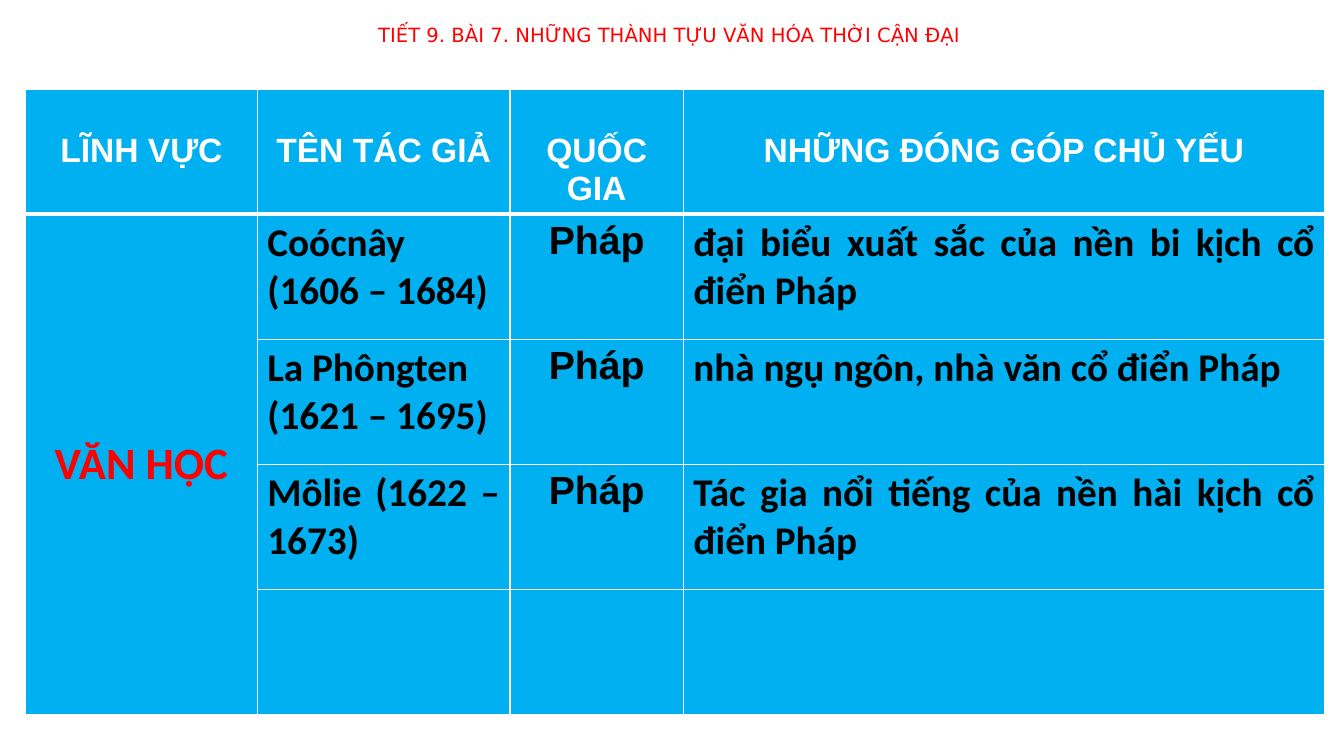
import lxml.etree
import pptx
import pptx.dml.color
import pptx.enum.text
import pptx.oxml.ns
import pptx.util

ALIGN = pptx.enum.text.PP_ALIGN
ANCHOR = pptx.enum.text.MSO_ANCHOR
SKY, RED, WHITE, BLACK = "00B0F0", "FF0000", "FFFFFF", "000000"


def rgb(value):
    return pptx.dml.color.RGBColor.from_string(value)


class LessonSlide:
    """Holds the slide and its style; lengths are percentages of the slide's size."""

    def __init__(self, prs):
        self.width, self.height = prs.slide_width, prs.slide_height
        self.slide = prs.slides.add_slide(prs.slide_layouts[6])

    def x(self, share):
        return round(self.width * share / 100)

    def y(self, share):
        return round(self.height * share / 100)

    def line(self, parent, tag, color, points):
        qn = pptx.oxml.ns.qn
        ln = lxml.etree.SubElement(parent, qn(tag), w=str(pptx.util.Pt(points)))
        fill = lxml.etree.SubElement(ln, qn("a:solidFill"))
        lxml.etree.SubElement(fill, qn("a:srgbClr"), val=color)

    def add_text(self, tf, lines, size, font, color, align, bold=True):
        for i, text in enumerate(lines):
            p = tf.add_paragraph() if i else tf.paragraphs[0]
            p.alignment = align
            r = p.add_run()
            r.text = text
            r.font.size = pptx.util.Pt(size)
            r.font.name = font
            r.font.bold = bold
            r.font.color.rgb = rgb(color)

    def title(self, text, left, top, width, height):
        sp = self.slide.shapes.add_textbox(
            self.x(left), self.y(top), self.x(width), self.y(height))
        tf = sp.text_frame
        tf.word_wrap = False
        self.add_text(tf, [text], 14, "DejaVu Sans", RED, ALIGN.CENTER, False)
        rpr = tf.paragraphs[0].runs[0].font._element
        self.line(rpr, "a:ln", "FF3399", 1.5)
        rpr.insert(0, rpr[-1])

    def table(self, left, top, columns, row_height, rows):
        frame = self.slide.shapes.add_table(
            rows, len(columns), self.x(left), self.y(top),
            self.x(sum(columns)), self.y(row_height * rows))
        table = frame.table
        table.first_row = table.horz_banding = False
        for column, width in zip(table.columns, columns):
            column.width = self.x(width)
        for i, row in enumerate(table.rows):
            row.height = self.y(row_height)
            for cell in row.cells:
                self.style_cell(cell, 3 if i == 1 else 1, 3 if i == 0 else 1)
        return table

    def style_cell(self, cell, top, bottom):
        tcpr = cell._tc.get_or_add_tcPr()
        for side, points in zip("LRTB", (1, 1, top, bottom)):
            self.line(tcpr, f"a:ln{side}", WHITE, points)
        cell.fill.solid()
        cell.fill.fore_color.rgb = rgb(SKY)

    def header(self, cell, text):
        cell.margin_top = self.y(5.7)
        cell.margin_bottom = 0
        self.add_text(cell.text_frame, [text], 24, "Arial", WHITE, ALIGN.CENTER)

    def field(self, cell, text):
        cell.vertical_anchor = ANCHOR.MIDDLE
        self.add_text(cell.text_frame, [text], 32, "Calibri", RED, ALIGN.CENTER)

    def body(self, cell, lines, font="Calibri", align=ALIGN.JUSTIFY):
        self.add_text(cell.text_frame, lines, 28, font, BLACK, align)


HEADERS = ["LĨNH VỰC", "TÊN TÁC GIẢ", "QUỐC GIA", "NHỮNG ĐÓNG GÓP CHỦ YẾU"]
AUTHORS = [
    (["Coócnây (1606 – 1684)"], "Pháp",
     "đại biểu xuất sắc của nền bi kịch cổ điển Pháp"),
    (["La Phôngten", "(1621 – 1695)"], "Pháp",
     "nhà ngụ ngôn, nhà văn cổ điển Pháp"),
    (["Môlie (1622 – 1673)"], "Pháp",
     "Tác gia nổi tiếng của nền hài kịch cổ điển Pháp"),
]


def main():
    prs = pptx.Presentation()
    prs.slide_width = pptx.util.Inches(13.33)
    prs.slide_height = pptx.util.Inches(7.5)
    s = LessonSlide(prs)
    s.title("TIẾT 9. BÀI 7. NHỮNG THÀNH TỰU VĂN HÓA THỜI CẬN ĐẠI",
            8.4, 2.4, 82.8, 7.33)
    table = s.table(1.9, 11.8, [17.25, 18.8, 12.9, 47.7], 16.55, 5)
    for column, text in enumerate(HEADERS):
        s.header(table.cell(0, column), text)
    table.cell(1, 0).merge(table.cell(4, 0))
    s.field(table.cell(1, 0), "VĂN HỌC")
    for row, (author, country, work) in enumerate(AUTHORS, 1):
        s.body(table.cell(row, 1), author)
        s.body(table.cell(row, 2), [country], "Arial", ALIGN.CENTER)
        s.body(table.cell(row, 3), [work])
    prs.save("out.pptx")


if __name__ == "__main__":
    main()
